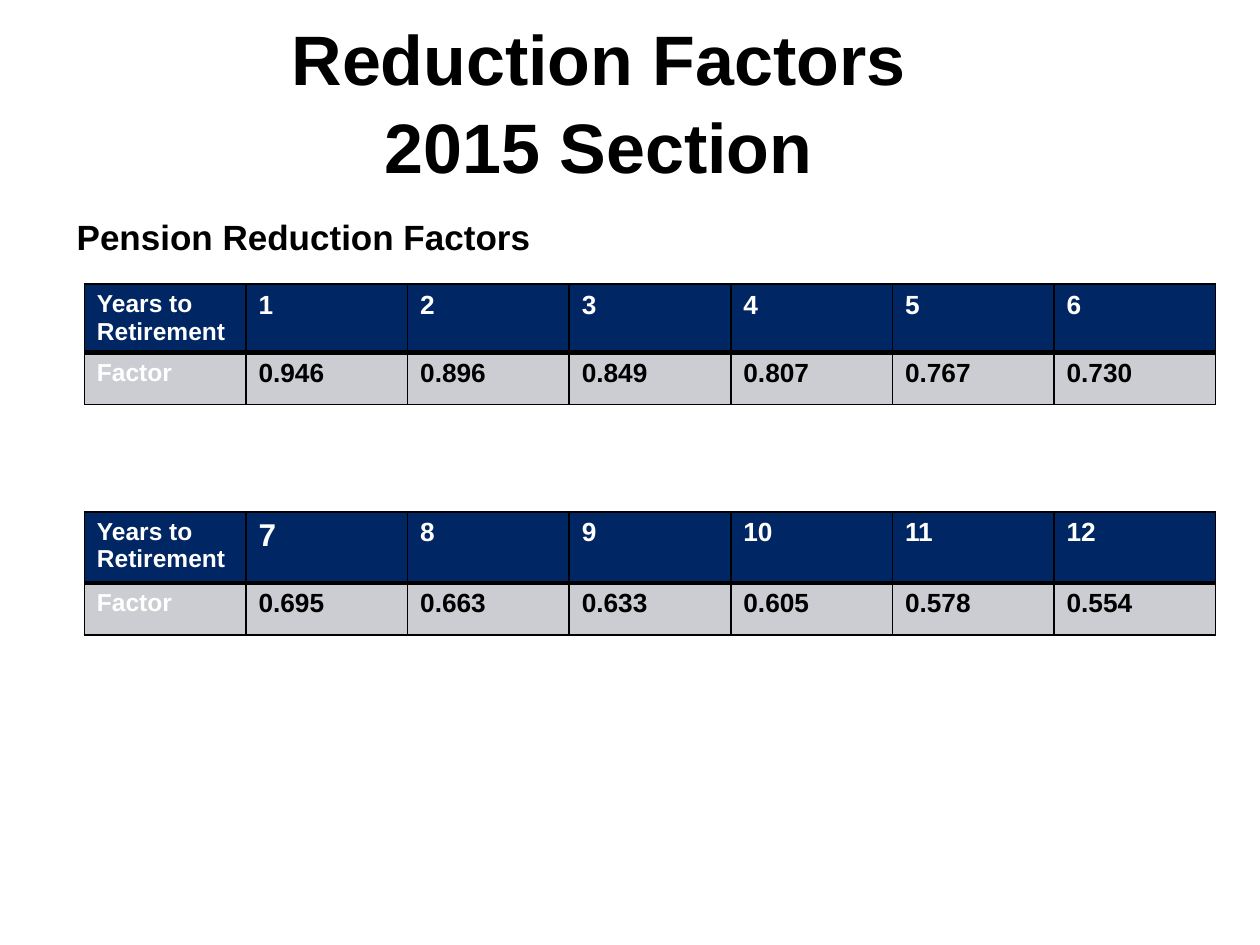
from dataclasses import dataclass

from lxml import etree
from pptx import Presentation
from pptx.dml.color import RGBColor
from pptx.enum.text import MSO_ANCHOR, MSO_AUTO_SIZE, PP_ALIGN
from pptx.oxml.ns import qn
from pptx.util import Pt

CENTER = PP_ALIGN.CENTER
MIDDLE = MSO_ANCHOR.MIDDLE
NO_FIT = MSO_AUTO_SIZE.NONE
GROW = MSO_AUTO_SIZE.SHAPE_TO_FIT_TEXT
TITLE_ONLY = 5


@dataclass(frozen=True)
class Theme:
    font: str = "Arial"
    black: str = "000000"
    white: str = "FFFFFF"
    navy: str = "002664"
    grey: str = "CCCDD3"
    title: float = 40
    subtitle: float = 20
    label: float = 14
    value: float = 15
    large_value: float = 18
    thin_line: float = 1
    thick_line: float = 3


class SlideBuilder:
    def __init__(self, page, theme):
        self.page = page
        self.theme = theme

    def format_text(self, para, size, color):
        values = {"name": self.theme.font, "size": Pt(size), "bold": True}
        for span in para.runs:
            for name, value in values.items():
                setattr(span.font, name, value)
            span.font.color.rgb = RGBColor.from_string(color)

    def title(self, lines, left, top, width, height):
        box = self.page.shapes.title
        place = {"left": left, "top": top, "width": width, "height": height}
        for name, value in place.items():
            setattr(box, name, Pt(value))
        frame = box.text_frame
        frame.auto_size = NO_FIT
        frame.vertical_anchor = MIDDLE
        para = frame.paragraphs[0]
        para.alignment = CENTER
        para.line_spacing = 1.05
        for index, line in enumerate(lines):
            if index:
                para.add_line_break()
            para.add_run().text = line
        self.format_text(para, self.theme.title, self.theme.black)

    def text(self, words, left, top, width, height):
        box = self.page.shapes.add_textbox(Pt(left), Pt(top), Pt(width), Pt(height))
        frame = box.text_frame
        frame.word_wrap = True
        frame.auto_size = GROW
        para = frame.paragraphs[0]
        para.text = words
        self.format_text(para, self.theme.subtitle, self.theme.black)

    def borders(self, cell, widths):
        properties = cell._tc.get_or_add_tcPr()
        for side, width in widths.items():
            line = etree.SubElement(properties, qn(f"a:ln{side}"), w=str(Pt(width)))
            fill = etree.SubElement(line, qn("a:solidFill"))
            etree.SubElement(fill, qn("a:srgbClr"), val=self.theme.black)

    def factor_table(self, years, factors, left, top, width, heights, large=()):
        theme = self.theme
        rows = [["Years to Retirement", *years], ["Factor", *factors]]
        columns = len(rows[0])
        table = self.page.shapes.add_table(
            len(rows), columns, Pt(left), Pt(top), Pt(width), Pt(sum(heights))
        ).table
        table.horz_banding = False
        for column in table.columns:
            column.width = Pt(width / columns)
        for r, (texts, height) in enumerate(zip(rows, heights)):
            table.rows[r].height = Pt(height)
            for c, words in enumerate(texts):
                cell = table.cell(r, c)
                cell.margin_bottom = Pt(2)
                # Thick rule between the header and the factors
                self.borders(cell, {
                    "L": theme.thin_line,
                    "R": theme.thin_line,
                    "T": theme.thick_line if r else theme.thin_line,
                    "B": theme.thin_line if r else theme.thick_line,
                })
                cell.fill.solid()
                cell.fill.fore_color.rgb = RGBColor.from_string(
                    theme.grey if r else theme.navy
                )
                cell.text = words
                size = theme.value if c else theme.label
                if words in large:
                    size = theme.large_value
                color = theme.black if r and c else theme.white
                self.format_text(cell.text_frame.paragraphs[0], size, color)


def main():
    deck = Presentation()
    deck.slide_width, deck.slide_height = Pt(720), Pt(540)
    page = deck.slides.add_slide(deck.slide_layouts[TITLE_ONLY])
    builder = SlideBuilder(page, Theme())

    # Headings
    builder.title(["Reduction Factors", "2015 Section"], 36, 12, 612, 90)
    builder.text("Pension Reduction Factors", 36.7, 119.5, 312, 31.5)

    # Factors for years 1 to 6, then 7 to 12
    builder.factor_table(
        ["1", "2", "3", "4", "5", "6"],
        ["0.946", "0.896", "0.849", "0.807", "0.767", "0.730"],
        48.2, 162.3, 646.5, [38.5, 29.7],
    )
    builder.factor_table(
        ["7", "8", "9", "10", "11", "12"],
        ["0.695", "0.663", "0.633", "0.605", "0.578", "0.554"],
        48.2, 292.5, 646.5, [40.6, 29.7], large=["7"],
    )
    deck.save("out.pptx")


if __name__ == "__main__":
    main()
